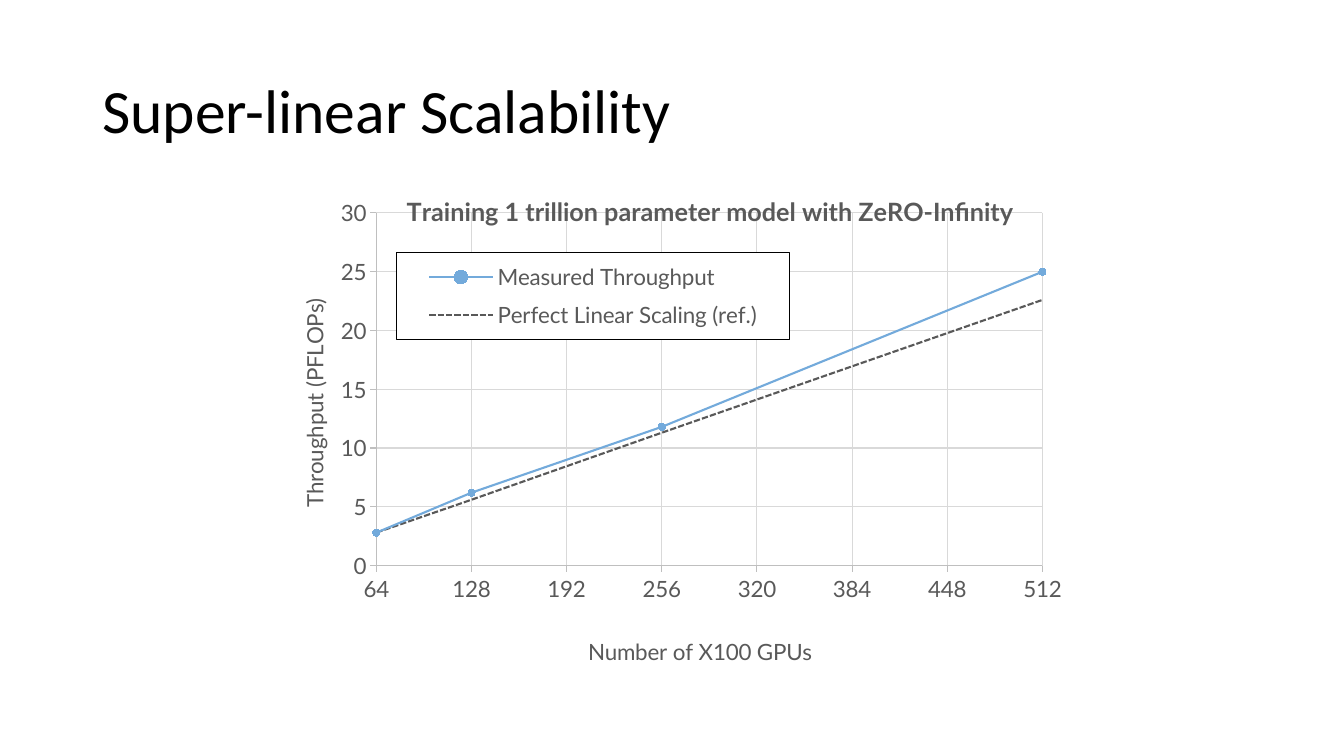
from lxml.etree import SubElement
from pptx import Presentation
from pptx.chart.data import XyChartData
from pptx.dml.color import RGBColor
from pptx.enum.chart import XL_CHART_TYPE, XL_LEGEND_POSITION, XL_MARKER_STYLE, XL_TICK_MARK
from pptx.enum.dml import MSO_LINE
from pptx.enum.text import MSO_ANCHOR
from pptx.oxml import parse_xml
from pptx.oxml.ns import nsdecls, qn
from pptx.util import Cm, Pt

COLORS = {"heading": "000000", "label": "595959", "measured": "73AADB",
          "axis": "BFBFBF", "grid": "D9D9D9"}
HEADING = "Super-linear Scalability"
HEADING_BOX = (2.33, 1.01, 29.21, 3.68)
CHART_BOX = (6.88, 4.5, 21.01, 12.75)
CHART_TITLE = "Training 1 trillion parameter model with ZeRO-Infinity"
GPU_TITLE = "Number of X100 GPUs"
THROUGHPUT_TITLE = "Throughput (PFLOPs)"
GPUS = [64, 128, 256, 512]
SERIES = [
    {"name": "Measured Throughput", "values": [2.8, 6.2, 11.8, 25],
     "color": "measured", "marker": XL_MARKER_STYLE.CIRCLE, "dash": None},
    {"name": "Perfect Linear Scaling (ref.)", "values": [2.8, 5.6, 11.3, 22.6],
     "color": "label", "marker": XL_MARKER_STYLE.NONE, "dash": MSO_LINE.SQUARE_DOT},
]
GPU_SCALE = {"minimum_scale": 64, "maximum_scale": 512, "major_unit": 64}
THROUGHPUT_SCALE = {"minimum_scale": 0, "maximum_scale": 30, "major_unit": 5}
# Fractions of the chart area
PLOT_LAYOUT = {"x": 0.124, "y": 0.068, "w": 0.799, "h": 0.697}
LEGEND_LAYOUT = {"x": 0.148, "y": 0.146, "w": 0.472, "h": 0.172}
TITLE_LAYOUT = {"x": 0.155, "y": 0.02}
GPU_TITLE_LAYOUT = {"x": 0.373, "y": 0.895}
THROUGHPUT_TITLE_LAYOUT = {"x": 0.026, "y": 0.229}


def rgb(name):
    return RGBColor.from_string(COLORS[name])


def set_font(font, size, color="label", name="Lato", bold=False):
    formats = {"size": Pt(size), "name": name, "bold": bold}
    for key, value in formats.items():
        setattr(font, key, value)
    font.color.rgb = rgb(color)


def set_line(line, color, width):
    line.color.rgb = rgb(color)
    line.width = Pt(width)


def place(element, index, layout, inner=False):
    """Give a chart part a manual layout, inserted as its child at index."""
    for old in element.findall(qn("c:layout")):
        element.remove(old)
    node = parse_xml(f"<c:layout {nsdecls('c')}/>")
    manual = SubElement(node, qn("c:manualLayout"))
    if inner:
        SubElement(manual, qn("c:layoutTarget"), val="inner")
    for key in ("x", "y"):
        SubElement(manual, qn(f"c:{key}Mode"), val="edge")
    for key, value in layout.items():
        SubElement(manual, qn(f"c:{key}"), val=str(value))
    element.insert(index, node)


def write_title(title, text, size, layout, bold=False):
    frame = title.text_frame
    frame.text = text
    set_font(frame.paragraphs[0].runs[0].font, size, bold=bold)
    place(frame._txBody.getparent().getparent(), 1, layout)
    return frame


def style_axis(axis, scale, text, layout):
    for key, value in scale.items():
        setattr(axis, key, value)
    axis.major_tick_mark = XL_TICK_MARK.OUTSIDE
    axis.minor_tick_mark = XL_TICK_MARK.NONE
    axis.has_major_gridlines = True
    set_line(axis.major_gridlines.format.line, "grid", 0.75)
    set_line(axis.format.line, "axis", 0.75)
    set_font(axis.tick_labels.font, 16)
    axis.tick_labels.number_format = "General"
    axis.tick_labels.number_format_is_linked = False
    return write_title(axis.axis_title, text, 16, layout)


def add_heading(slide):
    frame = slide.shapes.add_textbox(*map(Cm, HEADING_BOX)).text_frame
    frame.word_wrap = True
    frame.vertical_anchor = MSO_ANCHOR.MIDDLE
    paragraph = frame.paragraphs[0]
    paragraph.text = HEADING
    paragraph.line_spacing = 0.9
    set_font(paragraph.runs[0].font, 44, "heading", "Calibri")


def style_series(series, content):
    series.smooth = True
    set_line(series.format.line, content["color"], 1.5)
    if content["dash"]:
        series.format.line.dash_style = content["dash"]
    marker = series.marker
    marker.style = content["marker"]
    if content["marker"] != XL_MARKER_STYLE.NONE:
        marker.size = 5
        marker.format.fill.solid()
        marker.format.fill.fore_color.rgb = rgb(content["color"])
        set_line(marker.format.line, content["color"], 0.75)


def add_legend(chart):
    chart.has_legend = True
    legend = chart.legend
    legend.position = XL_LEGEND_POSITION.RIGHT
    legend.include_in_layout = True
    set_font(legend.font, 16)
    element = legend._element
    place(element, 1, LEGEND_LAYOUT)
    element.find(qn("c:txPr")).addprevious(parse_xml(
        f'<c:spPr {nsdecls("c", "a")}><a:solidFill><a:srgbClr val="FFFFFF"/></a:solidFill>'
        '<a:ln w="9525"><a:solidFill><a:srgbClr val="000000"/></a:solidFill></a:ln></c:spPr>'))


def add_scaling_chart(slide):
    data = XyChartData()
    for content in SERIES:
        points = data.add_series(content["name"])
        for gpus, throughput in zip(GPUS, content["values"]):
            points.add_data_point(gpus, throughput)
    chart = slide.shapes.add_chart(
        XL_CHART_TYPE.XY_SCATTER_SMOOTH, *map(Cm, CHART_BOX), data).chart
    set_font(chart.font, 16, "heading")
    chart.has_title = True
    write_title(chart.chart_title, CHART_TITLE, 18, TITLE_LAYOUT, bold=True)
    style_axis(chart.category_axis, GPU_SCALE, GPU_TITLE, GPU_TITLE_LAYOUT)
    throughput_title = style_axis(
        chart.value_axis, THROUGHPUT_SCALE, THROUGHPUT_TITLE, THROUGHPUT_TITLE_LAYOUT)
    body = throughput_title._txBody.find(qn("a:bodyPr"))
    for key, value in {"rot": "-5400000", "vert": "horz"}.items():
        body.set(key, value)
    plot = chart.plots[0]
    plot.vary_by_categories = False
    for series, content in zip(plot.series, SERIES):
        style_series(series, content)
    add_legend(chart)
    place(chart._chartSpace.chart.plotArea, 0, PLOT_LAYOUT, inner=True)


def main():
    presentation = Presentation()
    presentation.slide_width = Cm(33.87)
    presentation.slide_height = Cm(19.05)
    slide = presentation.slides.add_slide(presentation.slide_layouts[6])
    add_heading(slide)
    add_scaling_chart(slide)
    presentation.save("out.pptx")


if __name__ == "__main__":
    main()
